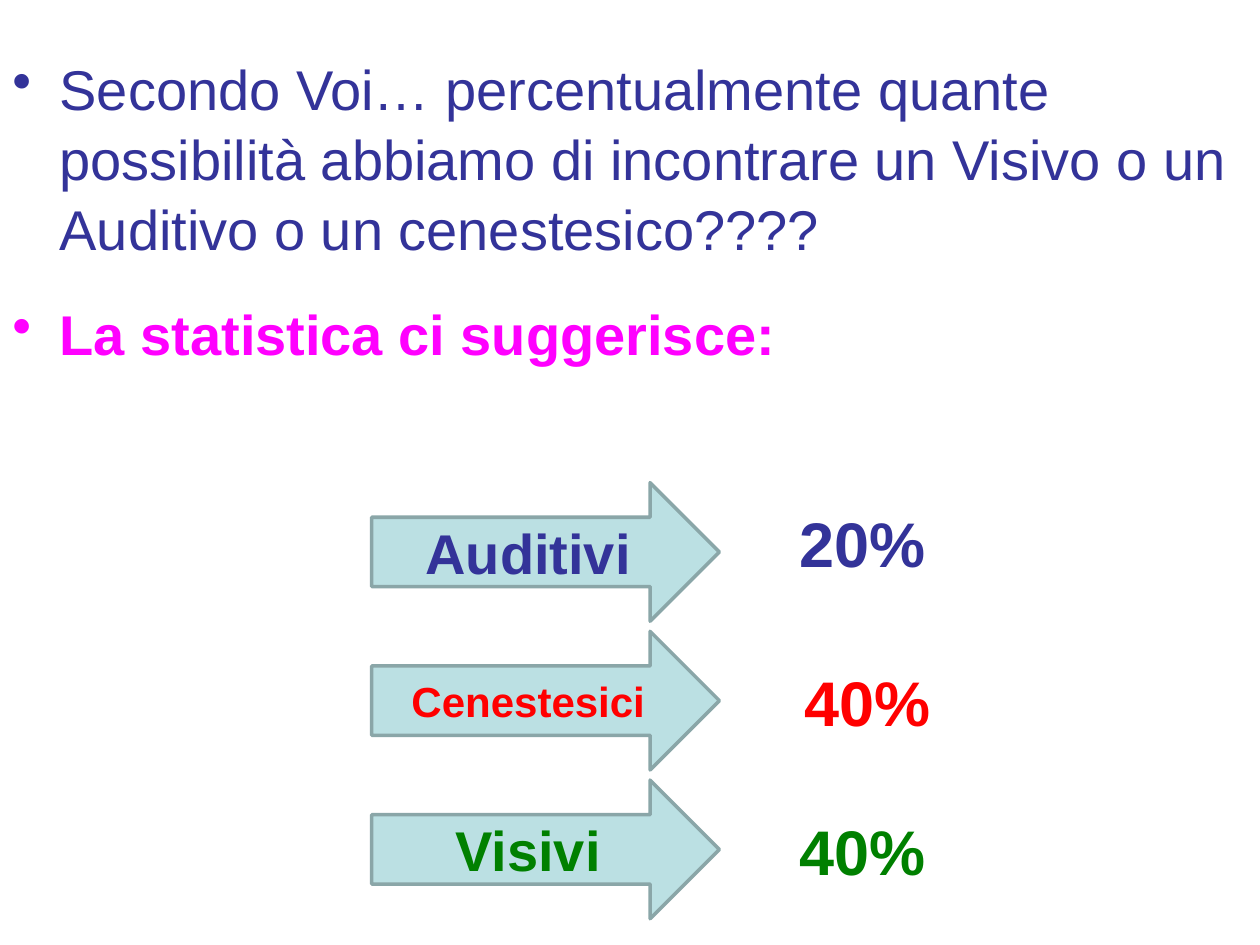
import pptx
import pptx.util
import pptx.dml.color
import pptx.enum.shapes
import pptx.enum.text
from dataclasses import dataclass
from lxml import etree

Pt = pptx.util.Pt
RGB = pptx.dml.color.RGBColor.from_string
SHAPE = pptx.enum.shapes.MSO_SHAPE
ALIGN = pptx.enum.text.PP_ALIGN
ANCHOR = pptx.enum.text.MSO_ANCHOR


@dataclass(frozen=True)
class Theme:
    font: str = "Arial"
    blue: str = "333399"
    magenta: str = "FF00FF"
    red: str = "FF0000"
    green: str = "008000"
    arrow: str = "BBE0E3"
    outline: str = "8AA6A8"
    white: str = "FFFFFF"
    body: int = 32
    small: int = 24
    value: int = 36


T = Theme()


def set_all(obj, formats):
    for name, value in formats.items():
        setattr(obj, name, value)


def add_run(p, text, size, color, bold):
    r = p.add_run()
    r.text = text
    set_all(r.font, {"name": T.font, "size": Pt(size), "bold": bold})
    r.font.color.rgb = RGB(color)


def add_bullet(p, text, color, bold, before):
    set_all(p, {"space_before": Pt(before), "line_spacing": 1.04})
    pPr = p._p.get_or_add_pPr()
    pPr.set("marL", str(Pt(27)))
    pPr.set("indent", str(-Pt(27)))
    bullet = etree.SubElement(pPr, pptx.oxml.ns.qn("a:buChar"))
    bullet.set("char", "•")
    add_run(p, text, T.body, color, bold)


def add_question(s):
    sp = s.shapes.add_textbox(Pt(0), Pt(26), Pt(720), Pt(514))
    tf = sp.text_frame
    tf.word_wrap = True
    add_bullet(tf.paragraphs[0],
               "Secondo Voi… percentualmente quante possibilità abbiamo di "
               "incontrare un Visivo o un Auditivo o un cenestesico????",
               T.blue, False, 2.5)
    add_bullet(tf.add_paragraph(), "La statistica ci suggerisce:",
               T.magenta, True, 20)


def add_label(s, kind, box, fill, line, text, size, color):
    sp = s.shapes.add_shape(kind, *(Pt(v) for v in box))
    sp.shadow.inherit = False
    sp.fill.solid()
    sp.fill.fore_color.rgb = RGB(fill)
    sp.line.color.rgb = RGB(line)
    sp.line.width = Pt(2)
    tf = sp.text_frame
    set_all(tf, {"word_wrap": True, "vertical_anchor": ANCHOR.MIDDLE})
    p = tf.paragraphs[0]
    p.alignment = ALIGN.CENTER
    add_run(p, text, size, color, True)


def add_statistics(s):
    rows = [
        ("Auditivi", T.body, "20%", T.blue, 287.3, 130.3),
        ("Cenestesici", T.small, "40%", T.red, 378, 136),
        ("Visivi", T.body, "40%", T.green, 463, 130.3),
    ]
    for i, (name, size, share, color, top, width) in enumerate(rows):
        add_label(s, SHAPE.RIGHT_ARROW, (212.4, 275.8 + 85 * i, 198.7, 79.2),
                  T.arrow, T.outline, name, size, color)
        add_label(s, SHAPE.RECTANGLE, (427.7, top, width, 45.4),
                  T.white, T.white, share, T.value, color)


def main():
    prs = pptx.Presentation()
    set_all(prs, {"slide_width": Pt(720), "slide_height": Pt(540)})
    s = prs.slides.add_slide(prs.slide_layouts[6])
    add_question(s)
    add_statistics(s)
    prs.save("out.pptx")


if __name__ == "__main__":
    main()
